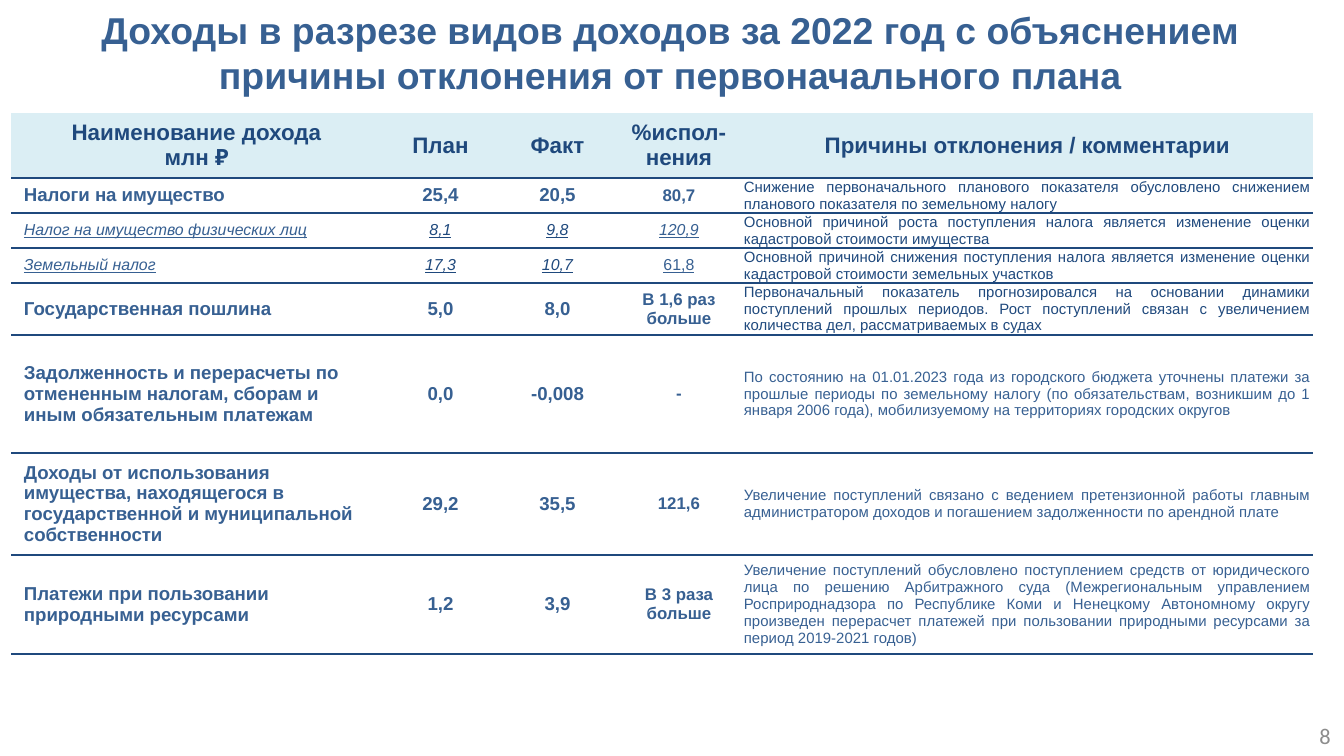
"""Build the slide on 2022 income by type with reasons for deviation from the plan."""
import pptx
import pptx.dml.color
import pptx.enum.text
import pptx.oxml
import pptx.oxml.ns
import pptx.util

RGBColor = pptx.dml.color.RGBColor
PP_ALIGN = pptx.enum.text.PP_ALIGN
MIDDLE = pptx.enum.text.MSO_ANCHOR.MIDDLE
NAVY = RGBColor(0x1F, 0x49, 0x7D)
BLUE = RGBColor(0x37, 0x60, 0x92)
PALE = RGBColor(0xDB, 0xEE, 0xF4)
GRAY = RGBColor(0x8C, 0x8C, 0x8C)
PX = 914400 / 134.4
NO_STYLE = "{2D5ABB26-0587-4C30-8999-92F81FD0307C}"
BORDER = (
    f'<a:lnB {pptx.oxml.ns.nsdecls("a")} w="12700"><a:solidFill>'
    f'<a:srgbClr val="{NAVY}"/></a:solidFill></a:lnB>'
)


def px(n):
    return pptx.util.Emu(round(n * PX))


def write(tf, text, size, color, align, bold=False, sub=False, italic=False, name="Arial"):
    tf.text = text
    for p in tf.paragraphs:
        p.alignment = align
        for r in p.runs:
            r.font.name = name
            r.font.size = pptx.util.Pt(size)
            r.font.color.rgb = color
            r.font.bold = bold
            r.font.italic = italic
            r.font.underline = sub


prs = pptx.Presentation()
prs.slide_width, prs.slide_height = px(1344), px(756)
s = prs.slides.add_slide(prs.slide_layouts[6])

rows = [
    ("Наименование дохода\nмлн ₽", "План", "Факт", "%испол-нения",
     "Причины отклонения / комментарии"),
    ("Налоги на имущество", "25,4", "20,5", "80,7",
     "Снижение первоначального планового показателя обусловлено снижением "
     "планового показателя по земельному налогу"),
    ("Налог на имущество физических лиц", "8,1", "9,8", "120,9",
     "Основной причиной роста поступления налога является изменение оценки "
     "кадастровой стоимости имущества"),
    ("Земельный налог", "17,3", "10,7", "61,8",
     "Основной причиной снижения поступления налога является изменение оценки "
     "кадастровой стоимости земельных участков"),
    ("Государственная пошлина", "5,0", "8,0", "В 1,6 раз\nбольше",
     "Первоначальный показатель прогнозировался на основании динамики "
     "поступлений прошлых периодов. Рост поступлений связан с увеличением "
     "количества дел, рассматриваемых в судах"),
    ("Задолженность и перерасчеты по отмененным налогам, сборам и иным "
     "обязательным платежам", "0,0", "-0,008", "-",
     "По состоянию на 01.01.2023 года из городского бюджета уточнены платежи за "
     "прошлые периоды по земельному налогу (по обязательствам, возникшим до 1 "
     "января 2006 года), мобилизуемому на территориях городских округов"),
    ("Доходы от использования имущества, находящегося в государственной и "
     "муниципальной собственности", "29,2", "35,5", "121,6",
     "Увеличение поступлений связано с ведением претензионной работы главным "
     "администратором доходов и погашением задолженности по арендной плате"),
    ("Платежи при пользовании природными ресурсами", "1,2", "3,9", "В 3 раза больше",
     "Увеличение поступлений обусловлено поступлением средств от юридического "
     "лица по решению Арбитражного суда (Межрегиональным управлением "
     "Росприроднадзора по Республике Коми и Ненецкому Автономному округу "
     "произведен перерасчет платежей при пользовании природными ресурсами за "
     "период 2019-2021 годов)"),
]
widths = [371, 117, 117, 126, 571]
heights = [65, 35, 35, 35, 52, 118, 102, 99]
sub_rows = (2, 3)

frame = s.shapes.add_table(
    len(rows), len(widths), px(11), px(113), px(sum(widths)), px(sum(heights)))
table = frame.table
table.first_row = table.horz_banding = False
frame._element.find(".//" + pptx.oxml.ns.qn("a:tableStyleId")).text = NO_STYLE
for col, width in zip(table.columns, widths):
    col.width = px(width)
for row, height in zip(table.rows, heights):
    row.height = px(height)

for i, row in enumerate(rows):
    sub = i in sub_rows
    for j, text in enumerate(row):
        cell = table.cell(i, j)
        tight = i > 0 and j > 2
        cell.vertical_anchor = MIDDLE
        cell.margin_left = cell.margin_right = px(2 if tight else 13)
        cell.margin_top = cell.margin_bottom = px(0 if tight else 6)
        tf = cell.text_frame
        if i == 0:
            write(tf, text, 12, NAVY, PP_ALIGN.CENTER, bold=True)
            cell.fill.solid()
            cell.fill.fore_color.rgb = PALE
        elif j == 4:
            write(tf, text, 8, NAVY if i < 5 else BLUE, PP_ALIGN.JUSTIFY)
        else:
            size = 8.5 if sub else 9 if j == 3 else 10
            color = NAVY if sub and j in (1, 2) else BLUE
            align = PP_ALIGN.CENTER if j else PP_ALIGN.LEFT
            write(tf, text, size, color, align, bold=not sub, sub=sub,
                  italic=sub and (i, j) != (3, 3))
        cell._tc.get_or_add_tcPr().insert(0, pptx.oxml.parse_xml(BORDER))

sp = s.shapes.add_textbox(px(1031), px(716), px(313), px(40))
tf = sp.text_frame
tf.word_wrap = True
tf.vertical_anchor = MIDDLE
write(tf, "8", 12, GRAY, PP_ALIGN.RIGHT, name="Calibri")

sp = s.shapes.add_textbox(px(1), px(1), px(1339), px(104))
tf = sp.text_frame
tf.word_wrap = True
write(tf, "Доходы в разрезе видов доходов за 2022 год с объяснением "
      "причины отклонения от первоначального плана", 20, BLUE, PP_ALIGN.CENTER, bold=True)

prs.save("out.pptx")
